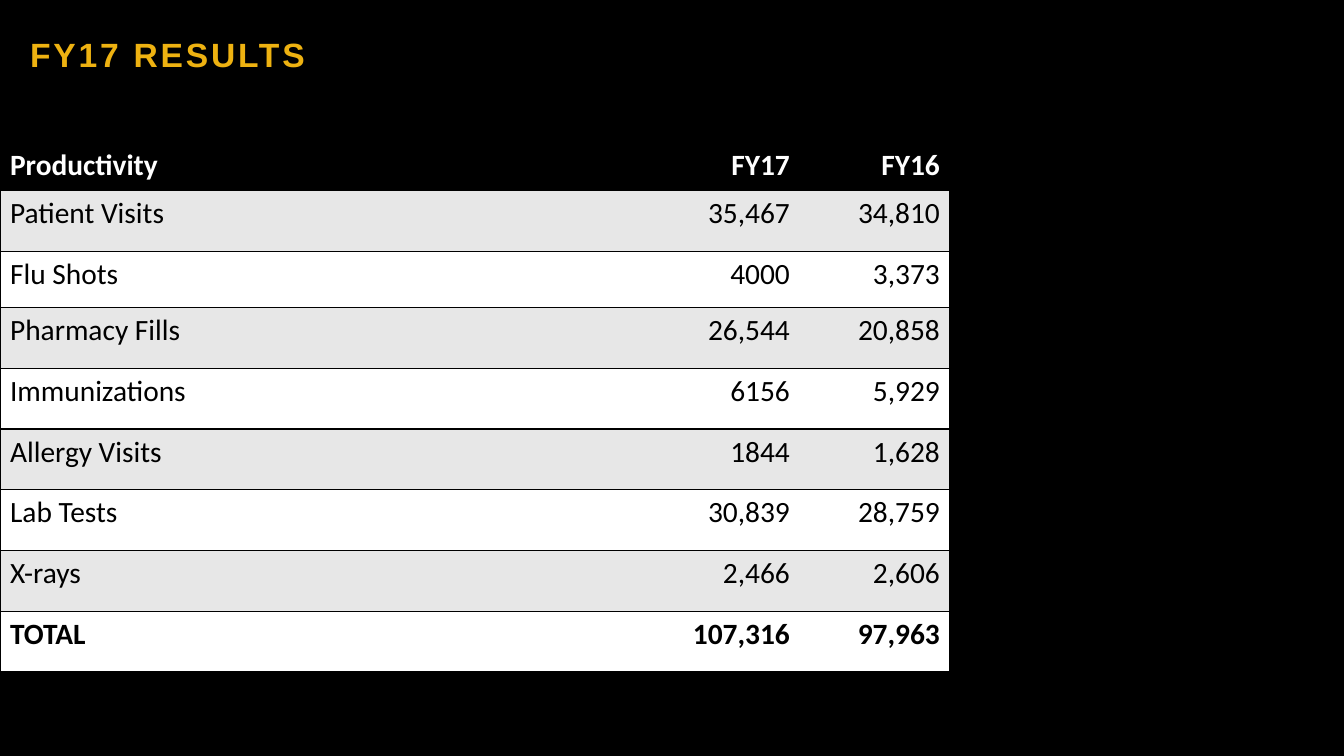
from lxml import etree
from pptx import Presentation
from pptx.dml.color import RGBColor
from pptx.enum.shapes import MSO_SHAPE
from pptx.enum.text import MSO_ANCHOR, PP_ALIGN
from pptx.oxml.ns import qn
from pptx.util import Cm, Pt

BLACK = RGBColor(0x00, 0x00, 0x00)
WHITE = RGBColor(0xFF, 0xFF, 0xFF)
GREY = RGBColor(0xE7, 0xE7, 0xE7)
GOLD = RGBColor(0xEE, 0xB2, 0x11)
RECTANGLE = MSO_SHAPE.RECTANGLE
MIDDLE = MSO_ANCHOR.MIDDLE
LEFT, RIGHT = PP_ALIGN.LEFT, PP_ALIGN.RIGHT

TITLE_FONT = {"name": "Arial", "size": Pt(24), "bold": True}
TABLE_FONT = {"name": "Calibri", "size": Pt(21)}
TITLE_FRAME = {
    "word_wrap": True,
    "vertical_anchor": MIDDLE,
    "margin_left": Cm(0.76),
    "margin_right": Cm(0.25),
    "margin_top": Cm(0.13),
    "margin_bottom": Cm(0.13),
}
COLUMN_WIDTHS = (16.43, 3.73, 3.78)
HEADER_HEIGHT, FLU_HEIGHT, ROW_HEIGHT = 1.22, 1.42, 1.53
RESULTS = (
    ("Productivity", "FY17", "FY16"),
    ("Patient Visits", "35,467", "34,810"),
    ("Flu Shots", "4000", "3,373"),
    ("Pharmacy Fills", "26,544", "20,858"),
    ("Immunizations", "6156", "5,929"),
    ("Allergy Visits", "1844", "1,628"),
    ("Lab Tests", "30,839", "28,759"),
    ("X-rays", "2,466", "2,606"),
    ("TOTAL", "107,316", "97,963"),
)


def apply_format(target, values):
    """Set each attribute named in values on the target."""
    for name, value in values.items():
        setattr(target, name, value)


def write_text(para, text, font, color):
    """Add one formatted run to a paragraph and return it."""
    span = para.add_run()
    span.text = text
    apply_format(span.font, font)
    span.font.color.rgb = color
    return span


def add_title(page, text):
    """Add the black title bar with letter-spaced gold text."""
    box = page.shapes.add_shape(RECTANGLE, 0, 0, Cm(23.93), Cm(2.74))
    box.shadow.inherit = False
    box.fill.solid()
    box.fill.fore_color.rgb = BLACK
    box.line.fill.background()
    apply_format(box.text_frame, TITLE_FRAME)
    para = box.text_frame.paragraphs[0]
    para.alignment = LEFT
    span = write_text(para, text, TITLE_FONT, GOLD)
    span.font._element.set("spc", "200")


def add_borders(cell, visible_sides):
    """Draw black lines on the visible sides and clear the others."""
    properties = cell._tc.get_or_add_tcPr()
    for side in "LRTB":
        line = etree.SubElement(properties, qn(f"a:ln{side}"), w=str(Pt(1)))
        if side in visible_sides:
            fill = etree.SubElement(line, qn("a:solidFill"))
            etree.SubElement(fill, qn("a:srgbClr"), val=str(BLACK))
        else:
            etree.SubElement(line, qn("a:noFill"))


def fill_cell(cell, text, row, column):
    """Write and format one cell according to its place in the table."""
    is_header = row == 0
    is_total = row == len(RESULTS) - 1
    add_borders(cell, ("LTB", "TB", "RTB")[column])
    cell.fill.solid()
    cell.fill.fore_color.rgb = BLACK if is_header else GREY if row % 2 else WHITE
    para = cell.text_frame.paragraphs[0]
    para.alignment = RIGHT if column else LEFT
    font = {**TABLE_FONT, "bold": is_header or is_total}
    write_text(para, text, font, WHITE if is_header else BLACK)


def add_results_table(page):
    """Add the productivity table."""
    heights = [ROW_HEIGHT] * len(RESULTS)
    heights[0], heights[2] = HEADER_HEIGHT, FLU_HEIGHT
    frame = page.shapes.add_table(
        len(RESULTS), len(COLUMN_WIDTHS), 0, Cm(3.58),
        Cm(sum(COLUMN_WIDTHS)), Cm(sum(heights)),
    )
    table = frame.table
    for column, width in zip(table.columns, COLUMN_WIDTHS):
        column.width = Cm(width)
    for row, height in zip(table.rows, heights):
        row.height = Cm(height)
    for row, values in enumerate(RESULTS):
        for column, text in enumerate(values):
            fill_cell(table.cell(row, column), text, row, column)


def main():
    """Build the results slide and save it."""
    deck = Presentation()
    deck.slide_width, deck.slide_height = Cm(33.87), Cm(19.05)
    page = deck.slides.add_slide(deck.slide_layouts[6])
    page.background.fill.solid()
    page.background.fill.fore_color.rgb = BLACK
    add_title(page, "FY17 RESULTS")
    add_results_table(page)
    deck.save("out.pptx")


if __name__ == "__main__":
    main()
